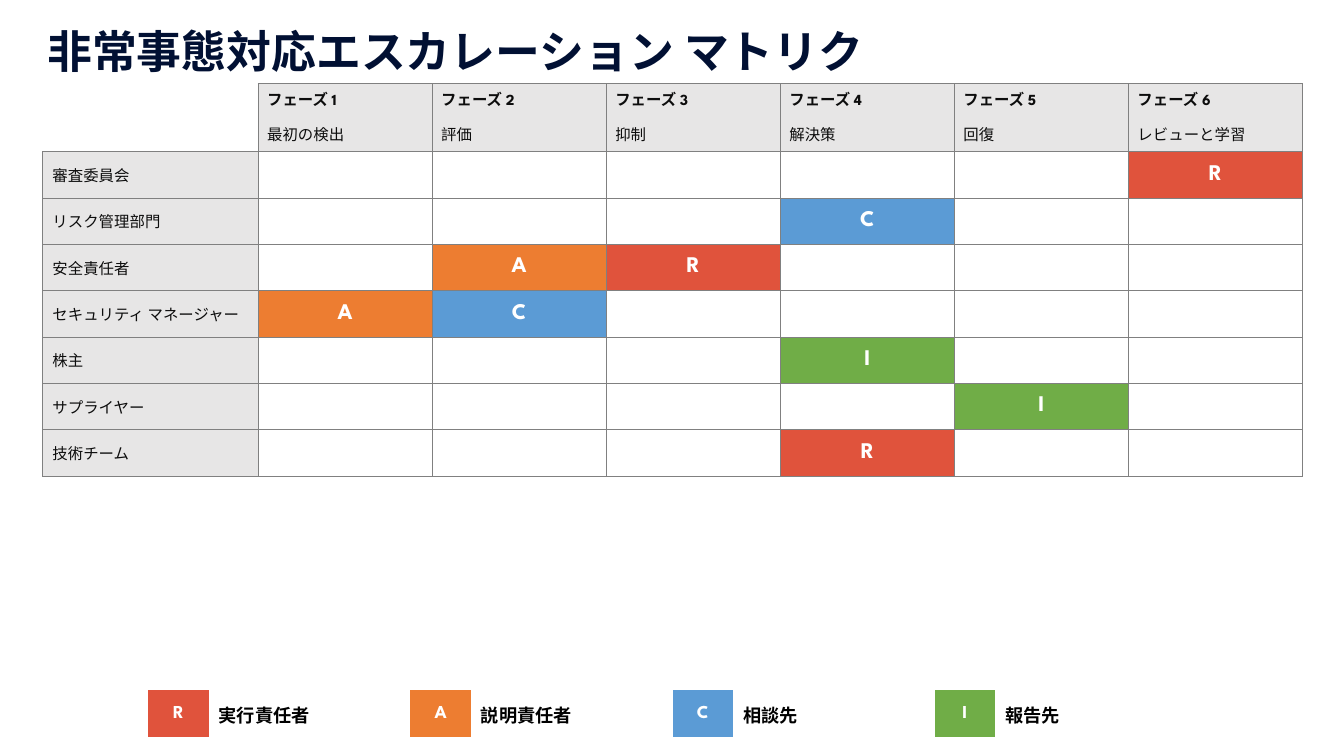
"""Build the emergency escalation matrix slide with its role legend."""
import lxml.etree
import pptx
import pptx.dml.color
import pptx.enum.text
import pptx.oxml.ns
import pptx.util

Inches = pptx.util.Inches
Pt = pptx.util.Pt
ALIGN = pptx.enum.text.PP_ALIGN
ANCHOR = pptx.enum.text.MSO_ANCHOR
RGB = pptx.dml.color.RGBColor.from_string
qn = pptx.oxml.ns.qn

FONT = "League Spartan"
NO_STYLE = "{2D5ABB26-0587-4C30-8999-92F81FD0307C}"
COLORS = {
    "title": "011033", "text": "0D0D0D", "black": "000000", "white": "FFFFFF",
    "header": "E7E6E6", "border": "808080",
    "R": "E0533C", "A": "ED7D31", "C": "5B9BD5", "I": "70AD47",
}


def write(frame, text, size=11, color="text", bold=False, align=ALIGN.LEFT):
    para = frame.paragraphs[0]
    para.alignment = align
    if not text:
        lxml.etree.SubElement(para._p, qn("a:endParaRPr"), sz=str(size * 100))
        return
    span = para.add_run()
    span.text = text
    span.font.name = FONT
    span.font.size = Pt(size)
    span.font.bold = bold
    span.font.color.rgb = RGB(COLORS[color])


def style_cell(cell, fill, sides="", margins=(0, 0, 0, 0), anchor=ANCHOR.MIDDLE):
    cell.fill.solid()
    cell.fill.fore_color.rgb = RGB(COLORS[fill])
    cell.vertical_anchor = anchor
    cell.margin_left, cell.margin_top, cell.margin_right, cell.margin_bottom = map(Inches, margins)
    properties = cell._tc.get_or_add_tcPr()
    for position, side in enumerate(sides):
        line = lxml.etree.Element(qn("a:ln" + side), w=str(Pt(0.5)))
        solid = lxml.etree.SubElement(line, qn("a:solidFill"))
        lxml.etree.SubElement(solid, qn("a:srgbClr"), val=COLORS["border"])
        properties.insert(position, line)


phases = ["最初の検出", "評価", "抑制", "解決策", "回復", "レビューと学習"]
teams = {
    "審査委員会": {6: "R"},
    "リスク管理部門": {4: "C"},
    "安全責任者": {2: "A", 3: "R"},
    "セキュリティ マネージャー": {1: "A", 2: "C"},
    "株主": {4: "I"},
    "サプライヤー": {5: "I"},
    "技術チーム": {4: "R"},
}
roles = {"R": "実行責任者", "A": "説明責任者", "C": "相談先", "I": "報告先"}

deck = pptx.Presentation()
deck.slide_width = Inches(13.33)
deck.slide_height = Inches(7.5)
page = deck.slides.add_slide(deck.slide_layouts[6])

title_box = page.shapes.add_textbox(Inches(0.37), Inches(0.19), Inches(8.69), Inches(0.64))
title_box.text_frame.word_wrap = True
write(title_box.text_frame, "非常事態対応エスカレーション マトリクス", size=32, color="title", bold=True)

matrix_frame = page.shapes.add_table(
    len(teams) + 2, len(phases) + 1, Inches(0.42), Inches(0.83), Inches(12.5), Inches(3.89))
legend_frame = page.shapes.add_table(
    1, 2 * len(roles), Inches(1.47), Inches(6.85), Inches(10.4), Inches(0.46))
for frame in (matrix_frame, legend_frame):
    frame.table.first_row = False
    frame.table.horz_banding = False
    frame.table._tbl.tblPr.find(qn("a:tableStyleId")).text = NO_STYLE

matrix = matrix_frame.table
for index, column in enumerate(matrix.columns):
    column.width = Inches((12.5 - 2.14) / len(phases) if index else 2.14)
for index, row in enumerate(matrix.rows):
    row.height = Inches((0.29, 0.28)[index] if index < 2 else 0.46)

for index, sides in enumerate(("R", "RB")):
    style_cell(matrix.cell(index, 0), "white", sides)
    write(matrix.cell(index, 0).text_frame, "")

for number, phase in enumerate(phases, 1):
    label, name = matrix.cell(0, number), matrix.cell(1, number)
    style_cell(label, "header", "LRT", (0.09, 0.01, 0.01, 0))
    write(label.text_frame, f"フェーズ {number}", bold=True)
    style_cell(name, "header", "LRB", (0.09, 0.1, 0.01, 0.1), ANCHOR.TOP)
    write(name.text_frame, phase)

for row, (team, duties) in enumerate(teams.items(), 2):
    style_cell(matrix.cell(row, 0), "header", "LRTB", (0.1, 0, 0, 0))
    write(matrix.cell(row, 0).text_frame, team)
    for number in range(1, len(phases) + 1):
        duty = duties.get(number, "")
        cell = matrix.cell(row, number)
        style_cell(cell, duty or "white", "LRTB")
        write(cell.text_frame, duty, size=16, color="white", bold=True, align=ALIGN.CENTER)

legend = legend_frame.table
legend.rows[0].height = Inches(0.46)
for index, (code, role) in enumerate(roles.items()):
    legend.columns[2 * index].width = Inches(0.6)
    legend.columns[2 * index + 1].width = Inches(2)
    key, name = legend.cell(0, 2 * index), legend.cell(0, 2 * index + 1)
    style_cell(key, code, margins=(0.01, 0.01, 0.01, 0))
    write(key.text_frame, code, size=13, color="white", bold=True, align=ALIGN.CENTER)
    style_cell(name, "white", margins=(0.1, 0.01, 0.01, 0))
    write(name.text_frame, role, size=13, color="black", bold=True)

deck.save("out.pptx")
